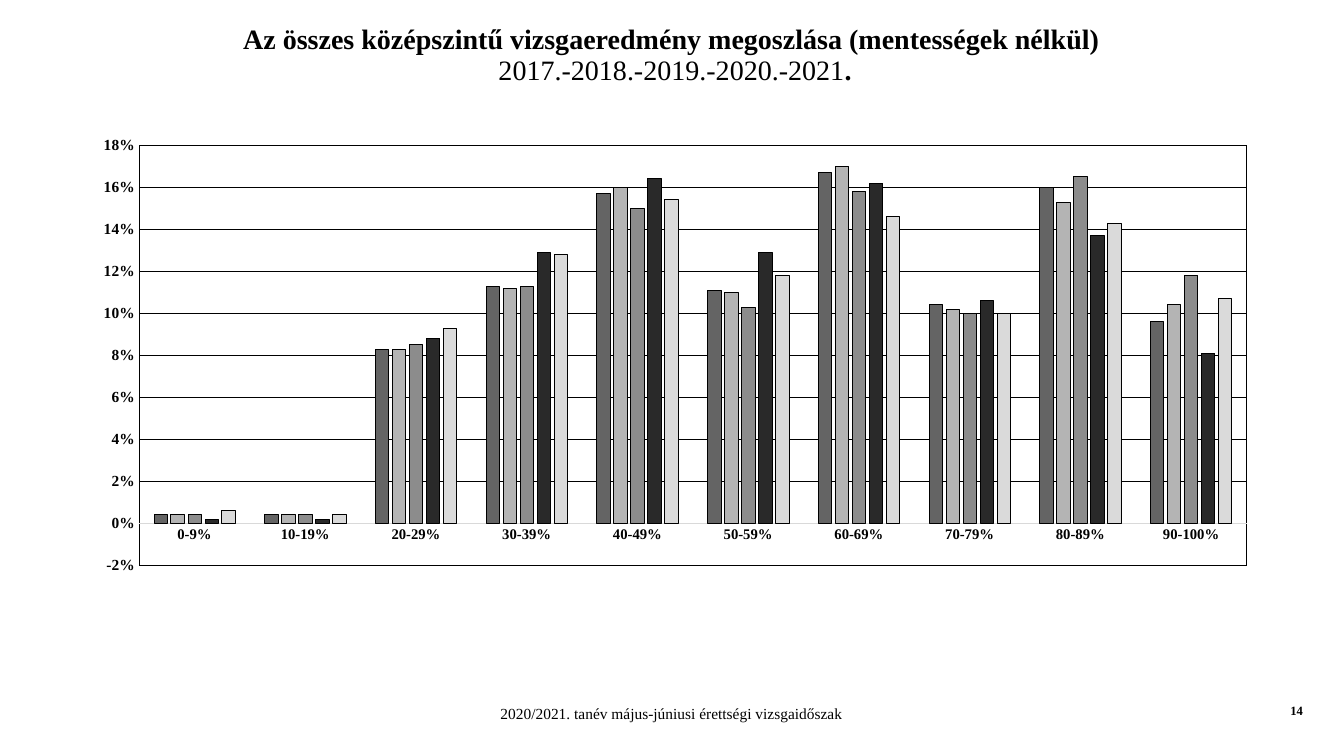
from lxml import etree
from pptx import Presentation
from pptx.chart.data import CategoryChartData
from pptx.dml.color import RGBColor
from pptx.enum.chart import XL_CHART_TYPE as ChartType, XL_TICK_MARK as TickMark
from pptx.enum.text import MSO_ANCHOR as Anchor, PP_ALIGN as Align
from pptx.oxml import parse_xml
from pptx.oxml.ns import nsdecls, qn
from pptx.util import Inches, Pt

FONT = "Times New Roman"
BLACK = RGBColor(0x00, 0x00, 0x00)
AXIS_GRAY = RGBColor(0xD9, 0xD9, 0xD9)

CATEGORIES = ["0-9%", "10-19%", "20-29%", "30-39%", "40-49%",
              "50-59%", "60-69%", "70-79%", "80-89%", "90-100%"]
SERIES = [
    ("2017", RGBColor(0x64, 0x64, 0x64),
     [0.004, 0.004, 0.083, 0.113, 0.157, 0.111, 0.167, 0.104, 0.16, 0.096]),
    ("2018", RGBColor(0xB4, 0xB4, 0xB4),
     [0.004, 0.004, 0.083, 0.112, 0.16, 0.11, 0.17, 0.102, 0.153, 0.104]),
    ("2019", RGBColor(0x8C, 0x8C, 0x8C),
     [0.004, 0.004, 0.085, 0.113, 0.15, 0.103, 0.158, 0.1, 0.165, 0.118]),
    ("2020", RGBColor(0x29, 0x29, 0x29),
     [0.002, 0.002, 0.088, 0.129, 0.164, 0.129, 0.162, 0.106, 0.137, 0.081]),
    ("2021", RGBColor(0xDA, 0xDA, 0xDA),
     [0.006, 0.004, 0.093, 0.128, 0.154, 0.118, 0.146, 0.1, 0.143, 0.107]),
]


def style_font(font, size, bold=True):
    font.name = FONT
    font.size = Pt(size)
    font.bold = bold
    font.color.rgb = BLACK


def style_line(line, color, width):
    line.color.rgb = color
    line.width = Pt(width)


def add_text(page, lines, left, top, width, height, size=11,
             align=Align.LEFT, anchor=Anchor.TOP, wrap=True, spacing=1.0):
    box = page.shapes.add_textbox(Inches(left), Inches(top), Inches(width), Inches(height))
    frame = box.text_frame
    frame.word_wrap = wrap
    frame.vertical_anchor = anchor
    para = frame.paragraphs[0]
    para.alignment = align
    para.line_spacing = spacing
    for index, line in enumerate(lines):
        if index:
            para.add_line_break()
        for text, bold in line:
            span = para.add_run()
            span.text = text
            style_font(span.font, size, bold)


def frame_plot(chart, left, top, width, height):
    plot_area = chart.element.find(".//" + qn("c:plotArea"))
    for layout in plot_area.findall(qn("c:layout")):
        plot_area.remove(layout)
    layout = parse_xml(
        f'<c:layout {nsdecls("c")}><c:manualLayout><c:layoutTarget val="inner"/>'
        '<c:xMode val="edge"/><c:yMode val="edge"/></c:manualLayout></c:layout>')
    for tag, value in zip("xywh", (left, top, width, height)):
        etree.SubElement(layout[0], qn(f"c:{tag}"), val=str(value))
    plot_area.insert(0, layout)
    plot_area.append(parse_xml(
        f'<c:spPr {nsdecls("c", "a")}>'
        '<a:solidFill><a:srgbClr val="FFFFFF"/></a:solidFill>'
        f'<a:ln w="{Pt(0.5)}"><a:solidFill><a:srgbClr val="000000"/></a:solidFill></a:ln>'
        '</c:spPr>'))


def style_axis(axis, size):
    axis.major_tick_mark = TickMark.NONE
    axis.minor_tick_mark = TickMark.NONE
    style_font(axis.tick_labels.font, size)


def add_result_chart(page):
    data = CategoryChartData(number_format="0.0%")
    data.categories = CATEGORIES
    for name, _, values in SERIES:
        data.add_series(name, values)
    chart = page.shapes.add_chart(
        ChartType.COLUMN_CLUSTERED, Inches(0.79), Inches(1.26),
        Inches(11.81), Inches(4.53), data).chart
    chart.has_title = False
    chart.has_legend = False
    style_font(chart.font, 10)

    style_axis(chart.category_axis, 10.5)
    style_line(chart.category_axis.format.line, AXIS_GRAY, 0.75)

    scale = chart.value_axis
    style_axis(scale, 11)
    scale.minimum_scale = -0.02
    scale.maximum_scale = 0.18
    scale.major_unit = 0.02
    scale.tick_labels.number_format = "0%"
    scale.tick_labels.number_format_is_linked = False
    scale.format.line.fill.background()
    style_line(scale.major_gridlines.format.line, BLACK, 0.5)

    plot = chart.plots[0]
    plot.vary_by_categories = False
    plot.gap_width = 219
    plot.overlap = -27
    for series, (_, color, _) in zip(plot.series, SERIES):
        series.format.fill.solid()
        series.format.fill.fore_color.rgb = color
        style_line(series.format.line, BLACK, 0.5)
    frame_plot(chart, 0.05, 0.04, 0.93, 0.92)


def main():
    deck = Presentation()
    deck.slide_width = Inches(13.33)
    deck.slide_height = Inches(7.5)
    page = deck.slides.add_slide(deck.slide_layouts[6])
    add_text(page, [[("2020/2021. tanév május-júniusi érettségi vizsgaidőszak", False)]],
             3.59, 6.94, 6.14, 0.29, align=Align.CENTER)
    add_text(page,
             [[("Az összes középszintű vizsgaeredmény megoszlása (mentességek nélkül) ", True)],
              [("2017.-2018.-2019.-2020.-2021", False), (".", True)]],
             0.79, 0.2, 11.81, 0.71, size=20, align=Align.CENTER,
             anchor=Anchor.MIDDLE, spacing=0.9)
    add_text(page, [[("14", True)]], 12.7, 6.92, 0.33, 0.25, size=9, wrap=False)
    add_result_chart(page)
    deck.save("out.pptx")


if __name__ == "__main__":
    main()
